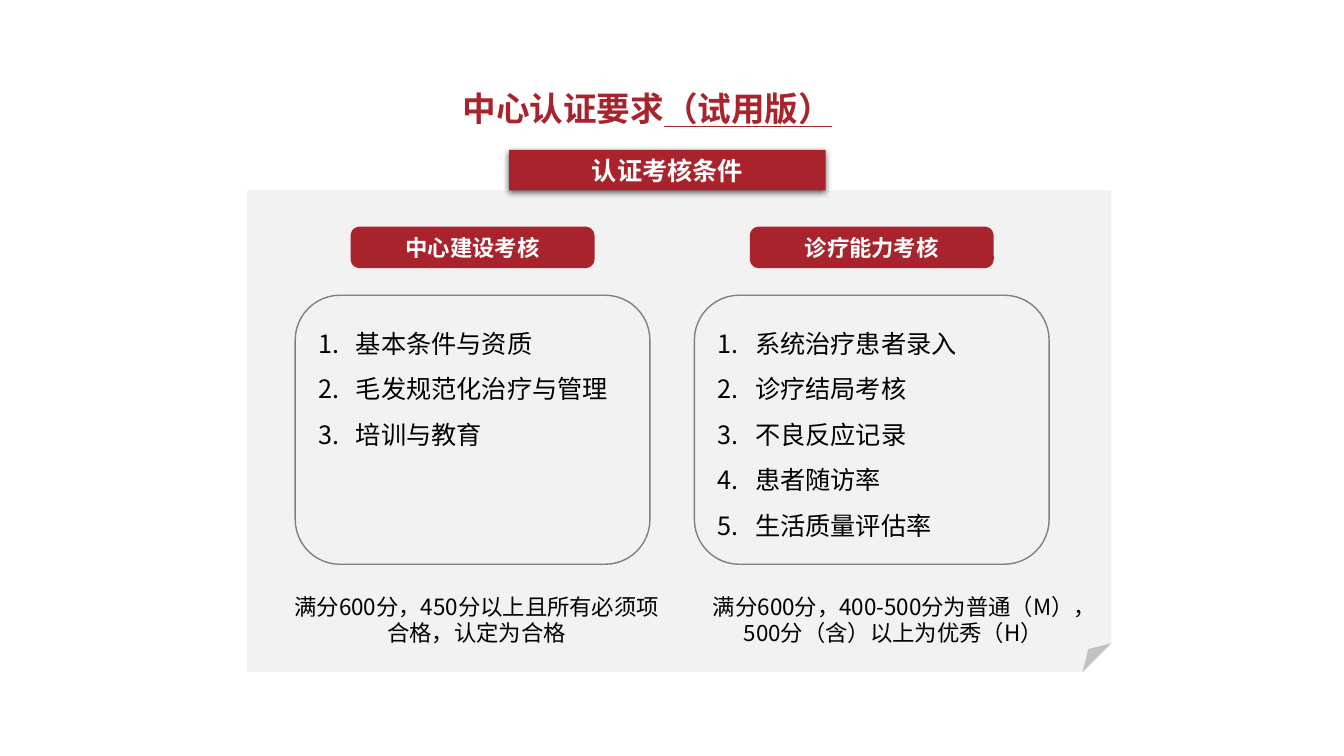
"""Build the slide on certification requirements for centers."""
from lxml import etree
from pptx import Presentation
from pptx.dml.color import RGBColor
from pptx.enum.shapes import MSO_SHAPE
from pptx.enum.text import MSO_ANCHOR, MSO_AUTO_SIZE, PP_ALIGN
from pptx.oxml.ns import qn
from pptx.util import Cm, Pt

FONT = "Noto Sans CJK SC"
COLORS = {"red": "A9232D", "white": "FFFFFF", "panel": "F2F2F2",
          "gray": "808080", "black": "000000"}
TITLE = ("中心认证要求", "（试用版）")
BANNER = "认证考核条件"
COLUMNS = [
    {"head": "中心建设考核",
     "items": ["基本条件与资质", "毛发规范化治疗与管理", "培训与教育"],
     "note": "满分600分，450分以上且所有必须项合格，认定为合格",
     "shift": -0.53, "width": 10.21},
    {"head": "诊疗能力考核",
     "items": ["系统治疗患者录入", "诊疗结局考核", "不良反应记录", "患者随访率", "生活质量评估率"],
     "note": "满分600分，400-500分为普通（M），500分（含）以上为优秀（H）",
     "shift": 0, "width": 10.03},
]
LEFT, STEP, BOX_W, PILL_W = 7.44, 10.06, 8.94, 5.99


def color(name):
    return RGBColor.from_string(COLORS[name])


def style(frame, size, tint, bold=False, align=PP_ALIGN.CENTER):
    frame.word_wrap = True
    for para in frame.paragraphs:
        para.alignment = align
        for run in para.runs:
            font = run.font
            font.name, font.size, font.bold = FONT, Pt(size), bold
            font.color.rgb = color(tint)
            etree.SubElement(font._element, qn("a:ea"), typeface=FONT)


def add_box(slide, kind, place, fill=None, line=None, weight=1):
    shape = slide.shapes.add_shape(kind, *map(Cm, place))
    shape.shadow.inherit = False
    if fill:
        shape.fill.solid()
        shape.fill.fore_color.rgb = color(fill)
    else:
        shape.fill.background()
    if line:
        shape.line.color.rgb = color(line)
        shape.line.width = Pt(weight)
    else:
        shape.line.fill.background()
    return shape


def add_label(shape, text, size):
    frame = shape.text_frame
    frame.text = text
    frame.vertical_anchor = MSO_ANCHOR.MIDDLE
    style(frame, size, "white", True)


def add_shade(shape):
    effects = shape._element.spPr.find(qn("a:effectLst"))
    shade = etree.SubElement(effects, qn("a:outerShdw"), blurRad=str(Pt(4.5)),
                             dist=str(Pt(1.5)), dir="5400000", algn="ctr", rotWithShape="0")
    tint = etree.SubElement(shade, qn("a:srgbClr"), val=COLORS["black"])
    etree.SubElement(tint, qn("a:alpha"), val="63000")


def set_fold(shape, share):
    guides = shape._element.spPr.find(qn("a:prstGeom")).find(qn("a:avLst"))
    for guide in list(guides):
        guides.remove(guide)
    etree.SubElement(guides, qn("a:gd"), name="adj", fmla=f"val {round(share * 100000)}")


def add_title(slide):
    title = slide.shapes.title
    title.left, title.top, title.width, title.height = map(Cm, (4.11, 2.11, 24.41, 1.4))
    frame = title.text_frame
    frame.auto_size = MSO_AUTO_SIZE.NONE
    frame.vertical_anchor = MSO_ANCHOR.TOP
    frame.margin_left = frame.margin_right = frame.margin_top = frame.margin_bottom = Cm(0.1)
    for part in TITLE:
        frame.paragraphs[0].add_run().text = part
    style(frame, 24, "red", True)
    frame.paragraphs[0].runs[1].font.underline = True


def add_list(shape, items):
    frame = shape.text_frame
    frame.text = "\n".join(items)
    frame.vertical_anchor = MSO_ANCHOR.TOP
    for para in frame.paragraphs:
        para.line_spacing = 1.5
        props = para._p.get_or_add_pPr()
        props.set("marL", str(Cm(0.95)))
        props.set("indent", str(-Cm(0.95)))
        etree.SubElement(props, qn("a:buFont"), typeface="+mj-lt")
        etree.SubElement(props, qn("a:buAutoNum"), type="arabicPeriod")
    style(frame, 18, "black", align=PP_ALIGN.LEFT)


def add_column(slide, left, column):
    pill = add_box(slide, MSO_SHAPE.ROUNDED_RECTANGLE,
                   (left + (BOX_W - PILL_W) / 2, 5.79, PILL_W, 0.89), "red", "red", 4.5)
    add_label(pill, column["head"], 16)
    box = add_box(slide, MSO_SHAPE.ROUNDED_RECTANGLE, (left, 7.44, BOX_W, 6.78), line="gray")
    add_list(box, column["items"])
    place = (left + column["shift"], 14.81, column["width"], 1.63)
    frame = slide.shapes.add_textbox(*map(Cm, place)).text_frame
    frame.text = column["note"]
    frame.auto_size = MSO_AUTO_SIZE.SHAPE_TO_FIT_TEXT
    style(frame, 16, "black")


def main():
    deck = Presentation()
    deck.slide_width, deck.slide_height = Cm(33.87), Cm(19.05)
    slide = deck.slides.add_slide(deck.slide_layouts[5])
    add_title(slide)
    panel = add_box(slide, MSO_SHAPE.FOLDED_CORNER, (6.22, 4.8, 21.79, 12.14), "panel")
    set_fold(panel, 0.06)
    banner = add_box(slide, MSO_SHAPE.RECTANGLE, (12.83, 3.78, 7.98, 1.02), "red")
    add_shade(banner)
    add_label(banner, BANNER, 18)
    for index, column in enumerate(COLUMNS):
        add_column(slide, LEFT + index * STEP, column)
    deck.save("out.pptx")


if __name__ == "__main__":
    main()
